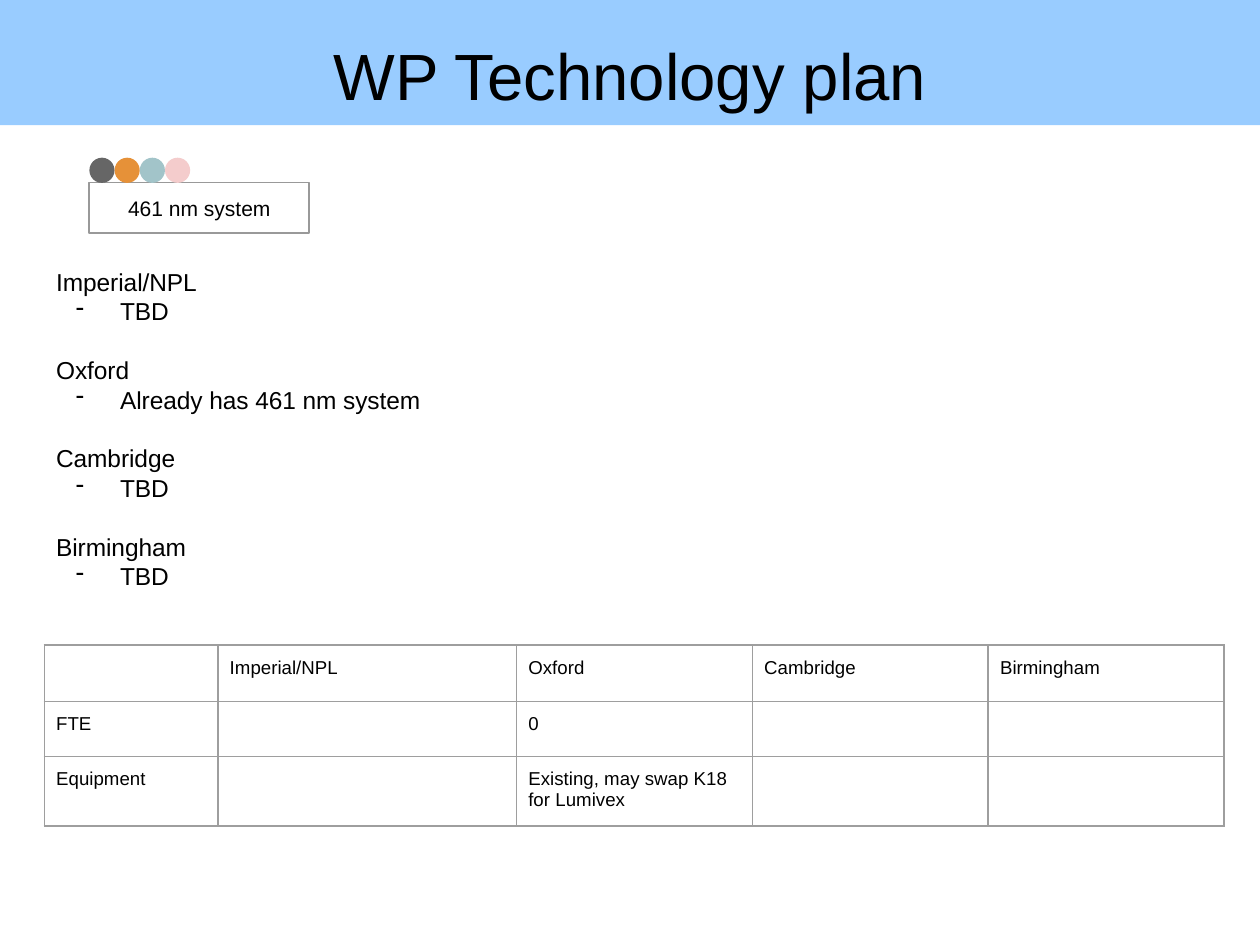
from lxml import etree
from pptx import Presentation
from pptx.dml.color import RGBColor
from pptx.enum import shapes, text
from pptx.oxml import ns
from pptx.util import Pt

BLACK = RGBColor(0x00, 0x00, 0x00)
SKY = RGBColor(0x99, 0xCC, 0xFF)
OUTLINE = RGBColor(0x99, 0x99, 0x99)
GRID = RGBColor(0x9E, 0x9E, 0x9E)
MARKERS = [RGBColor(0x66, 0x66, 0x66), RGBColor(0xE6, 0x91, 0x38),
           RGBColor(0xA2, 0xC4, 0xC9), RGBColor(0xF4, 0xCC, 0xCC)]
FONT = "Arial"
INSET = 5.1

SITES = [("Imperial/NPL", "TBD"), ("Oxford", "Already has 461 nm system"),
         ("Cambridge", "TBD"), ("Birmingham", "TBD")]
RESOURCES = [["", *(site for site, _ in SITES)],
             ["FTE", "", "0", "", ""],
             ["Equipment", "", "Existing, may swap K18 for Lumivex", "", ""]]


def write(paragraph, words, size, align=None, before=0, dash=False):
    """Fill a paragraph; an empty one only keeps its size."""
    paragraph.alignment = align
    if before:
        paragraph.space_before = Pt(before)
    if dash:
        props = paragraph._p.get_or_add_pPr()
        props.set("marL", str(Pt(27.4)))
        props.set("indent", str(Pt(-18.9)))
        etree.SubElement(props, ns.qn("a:buChar")).set("char", "-")
    if words:
        run = paragraph.add_run()
        run.text = words
        run.font.name = FONT
        run.font.size = Pt(size)
        run.font.color.rgb = BLACK
    else:
        end = etree.SubElement(paragraph._p, ns.qn("a:endParaRPr"))
        end.set("sz", str(int(size * 100)))


def set_insets(holder):
    holder.margin_left = holder.margin_right = Pt(INSET)
    holder.margin_top = holder.margin_bottom = Pt(INSET)


def add_plain_shape(slide, kind, box, fill=None, line=None):
    shape = slide.shapes.add_shape(kind, *map(Pt, box))
    shape.shadow.inherit = False
    if fill is None:
        shape.fill.background()
    else:
        shape.fill.solid()
        shape.fill.fore_color.rgb = fill
    if line is None:
        shape.line.fill.background()
    else:
        shape.line.color.rgb = line
        shape.line.width = Pt(0.75)
    set_insets(shape.text_frame)
    shape.text_frame.word_wrap = True
    return shape


def add_system_label(slide, left, top, width, height):
    """A boxed label with a row of round markers on top of it."""
    dot = 10.6
    pitch = 10.8
    label = add_plain_shape(slide, shapes.MSO_SHAPE.RECTANGLE,
                            (left, top + dot, width, height - dot), line=OUTLINE)
    label.text_frame.vertical_anchor = text.MSO_ANCHOR.MIDDLE
    write(label.text_frame.paragraphs[0], "461 nm system", 9,
          align=text.PP_ALIGN.CENTER)
    for i, color in enumerate(MARKERS):
        add_plain_shape(slide, shapes.MSO_SHAPE.OVAL,
                        (left + i * pitch, top, pitch, pitch), fill=color)


def add_site_plans(slide, left, top, width, height):
    frame = slide.shapes.add_textbox(*map(Pt, (left, top, width, height))).text_frame
    frame.word_wrap = True
    set_insets(frame)
    for i, (site, plan) in enumerate(SITES):
        heading = frame.add_paragraph() if i else frame.paragraphs[0]
        write(heading, site, 10.5, before=12.6 if i else 0)
        write(frame.add_paragraph(), plan, 10.5, dash=True)


def add_cell_borders(cell):
    props = cell._tc.get_or_add_tcPr()
    for i, side in enumerate(("lnL", "lnR", "lnT", "lnB")):
        border = etree.Element(ns.qn(f"a:{side}"), w=str(Pt(0.75)))
        fill = etree.SubElement(border, ns.qn("a:solidFill"))
        etree.SubElement(fill, ns.qn("a:srgbClr")).set("val", str(GRID))
        props.insert(i, border)


def add_resource_table(slide, left, top, width, height):
    column_shares = [74.4, 128, 101.1, 101.1, 101.1]
    row_shares = [24.1, 23.7, 29.8]
    table = slide.shapes.add_table(len(RESOURCES), len(RESOURCES[0]),
                                   *map(Pt, (left, top, width, height))).table
    table.first_row = table.horz_banding = False
    for column, share in zip(table.columns, column_shares):
        column.width = Pt(width * share / sum(column_shares))
    for row, share, entries in zip(table.rows, row_shares, RESOURCES):
        row.height = Pt(height * share / sum(row_shares))
        for cell, entry in zip(row.cells, entries):
            set_insets(cell)
            cell.fill.background()
            add_cell_borders(cell)
            write(cell.text_frame.paragraphs[0], entry, 8)


def add_title_band(slide, left, top, width, height):
    band = add_plain_shape(slide, shapes.MSO_SHAPE.RECTANGLE,
                           (left, top, width, height), fill=SKY)
    band.text_frame.vertical_anchor = text.MSO_ANCHOR.BOTTOM
    write(band.text_frame.paragraphs[0], "WP Technology plan", 28,
          align=text.PP_ALIGN.CENTER)


def main():
    deck = Presentation()
    deck.slide_width, deck.slide_height = Pt(540), Pt(405)
    slide = deck.slides.add_slide(deck.slide_layouts[6])
    add_system_label(slide, 38.3, 67.6, 94.2, 32.4)
    add_site_plans(slide, 19, 109.4, 505.7, 153.4)
    add_resource_table(slide, 19, 276.5, 505.7, 77.6)
    add_title_band(slide, 0, 0, 540, 53.7)
    deck.save("out.pptx")


if __name__ == "__main__":
    main()
